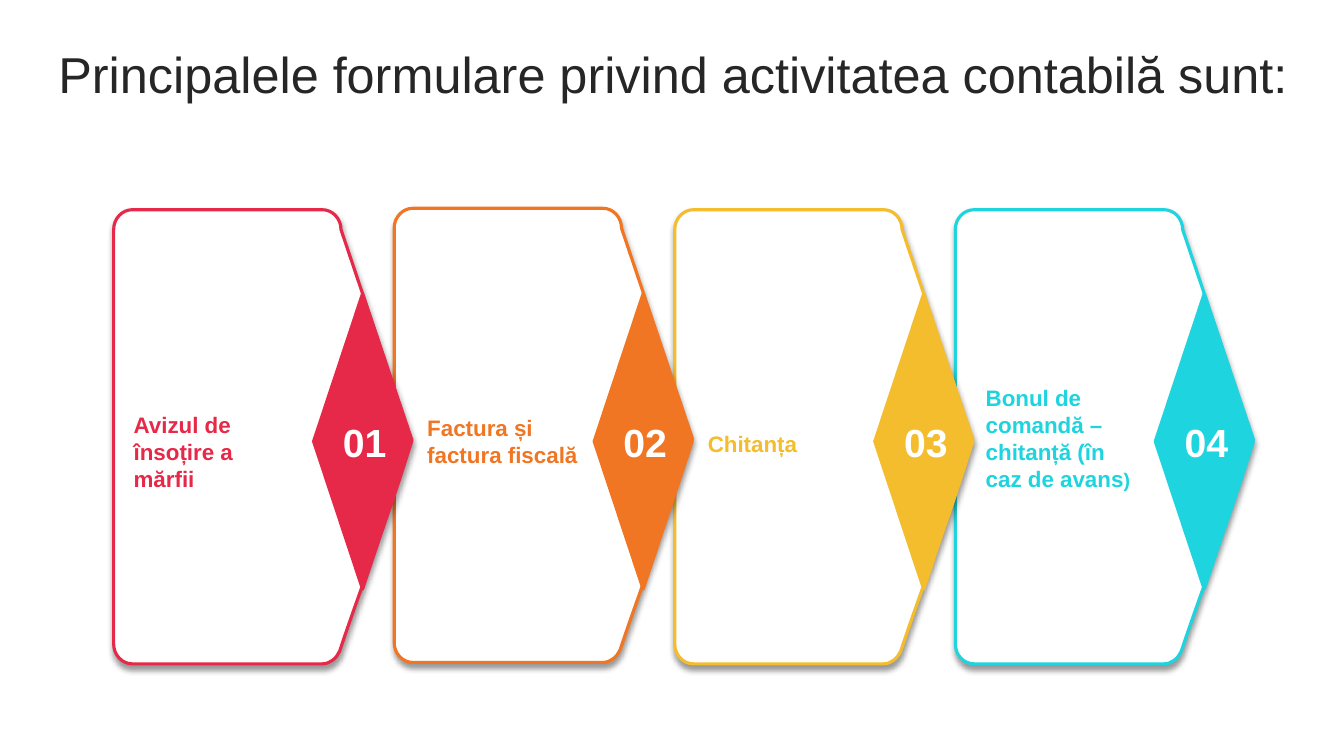
from dataclasses import dataclass

import lxml.etree
import pptx
import pptx.dml.color
import pptx.enum.shapes
import pptx.enum.text
import pptx.oxml
import pptx.oxml.ns
import pptx.shapes.base
import pptx.shapes.shapetree
import pptx.util

Pt = pptx.util.Pt
RGB = pptx.dml.color.RGBColor
Align = pptx.enum.text.PP_ALIGN
Anchor = pptx.enum.text.MSO_ANCHOR
Tree = pptx.shapes.shapetree.SlideShapes | pptx.shapes.shapetree.GroupShapes
Point = tuple[float, float]
qn = pptx.oxml.ns.qn

RED = RGB(0xE6, 0x29, 0x49)
ORANGE = RGB(0xF0, 0x76, 0x24)
YELLOW = RGB(0xF4, 0xBD, 0x2D)
CYAN = RGB(0x1E, 0xD4, 0xDE)
WHITE = RGB(0xFF, 0xFF, 0xFF)
DARK = RGB(0x26, 0x26, 0x26)

LEFT = 81.2
PITCH = 200.4
SHADOW = (
    f'<a:effectLst {pptx.oxml.ns.nsdecls("a")}>'
    f'<a:outerShdw blurRad="{Pt(4)}" dist="{Pt(3)}" dir="5400000" '
    'algn="t" rotWithShape="0"><a:srgbClr val="000000">'
    '<a:alpha val="40000"/></a:srgbClr></a:outerShdw></a:effectLst>'
)

START: Point = (13.4, 0)
OUTLINE: list[list[Point]] = [
    [(149, 0)],
    [(156.4, 0), (162.4, 6.4), (162.4, 14.2)],
    [(213, 164.4)],
    [(197, 218.2), (178.4, 264.4), (161.4, 315.4)],
    [(159.2, 320.4), (154.5, 324.4), (149, 324.4)],
    [(13.4, 324.4)],
    [(6, 324.4), (0, 318), (0, 310.2)],
    [(0, 14.2)],
    [(0, 6.4), (6, 0), START],
]


@dataclass(frozen=True)
class Box:
    left: float
    top: float
    width: float
    height: float


@dataclass(frozen=True)
class Run:
    text: str
    size: float


@dataclass(frozen=True)
class Style:
    color: RGB
    bold: bool = True
    align: Align = Align.LEFT
    anchor: Anchor = Anchor.TOP
    inset: tuple[float, float] = (7.2, 3.6)
    space: float = 1.0


@dataclass(frozen=True)
class Card:
    color: RGB
    top: float
    label: Box
    runs: list[Run]


CARDS = [
    Card(RED, 149.8, Box(7.2, 290.2, 131.8, 65.5),
         [Run("Avizul de însoțire a mărfii", 16)]),
    Card(ORANGE, 148.8, Box(16.5, 292.2, 128.9, 46),
         [Run("Factura și factura fiscală", 16)]),
    Card(YELLOW, 149.8, Box(16.5, 303.7, 128.9, 26.6),
         [Run("Chitanța", 16)]),
    Card(CYAN, 149.8, Box(14.6, 270.9, 128.9, 85),
         [Run("Bonul de comandă – chitanță (în caz de avans", 16),
          Run(")", 14)]),
]


def paint(shape: pptx.shapes.base.BaseShape, fill: RGB, line: RGB) -> None:
    shape.shadow.inherit = False
    shape.fill.solid()
    shape.fill.fore_color.rgb = fill
    shape.line.color.rgb = line
    shape.line.width = Pt(2.25)


def write(tree: Tree, box: Box, runs: list[Run], style: Style) -> None:
    shape = tree.add_textbox(
        Pt(box.left), Pt(box.top), Pt(box.width), Pt(box.height))
    frame = shape.text_frame
    frame.word_wrap = True
    frame.vertical_anchor = style.anchor
    side, edge = style.inset
    frame.margin_left = frame.margin_right = Pt(side)
    frame.margin_top = frame.margin_bottom = Pt(edge)
    para = frame.paragraphs[0]
    para.alignment = style.align
    para.line_spacing = style.space
    para.font.name = "Arial"
    para.font.bold = style.bold
    para.font.color.rgb = style.color
    para.font.size = Pt(runs[0].size)
    for item in runs:
        run = para.add_run()
        run.text = item.text
        if item.size != runs[0].size:
            run.font.size = Pt(item.size)


def panel(tree: Tree, left: float, top: float, color: RGB) -> None:
    pen = tree.build_freeform(Pt(START[0]), Pt(START[1]))
    pen.add_line_segments(
        [(Pt(leg[-1][0]), Pt(leg[-1][1])) for leg in OUTLINE], close=True)
    shape = pen.convert_to_shape(Pt(left), Pt(top))
    paint(shape, WHITE, color)
    props = shape.element.spPr
    for line, leg in zip(list(props.iter(qn("a:lnTo"))), OUTLINE):
        if len(leg) == 3:
            bend = lxml.etree.Element(qn("a:cubicBezTo"))
            for x, y in leg:
                lxml.etree.SubElement(
                    bend, qn("a:pt"), x=str(Pt(x)), y=str(Pt(y)))
            line.getparent().replace(line, bend)
    props.replace(props.find(qn("a:effectLst")),
                  pptx.oxml.parse_xml(SHADOW))


def draw(tree: Tree, card: Card, index: int) -> None:
    left = LEFT + index * PITCH
    panel(tree, left, card.top, card.color)

    gem = tree.add_shape(
        pptx.enum.shapes.MSO_SHAPE.DIAMOND,
        Pt(left + 142.8), Pt(209.8), Pt(70), Pt(211))
    paint(gem, card.color, card.color)

    spot = card.label
    write(tree, Box(left + spot.left, spot.top, spot.width, spot.height),
          card.runs, Style(card.color))
    write(tree, Box(left + 147.6, 298.4, 63.4, 34),
          [Run(f"{index + 1:02}", 28)],
          Style(WHITE, True, Align.CENTER, Anchor.MIDDLE, (5.8, 0)))


def main() -> None:
    deck = pptx.Presentation()
    deck.slide_width = Pt(960)
    deck.slide_height = Pt(540)
    slide = deck.slides.add_slide(deck.slide_layouts[6])
    write(slide.shapes, Box(25.2, 26.6, 911.5, 56.9),
          [Run("Principalele formulare privind activitatea contabilă sunt:",
               36)],
          Style(DARK, False, Align.CENTER, Anchor.MIDDLE, space=0.9))
    for index, card in reversed(list(enumerate(CARDS))):
        draw(slide.shapes.add_group_shape().shapes, card, index)
    deck.save("out.pptx")


if __name__ == "__main__":
    main()
